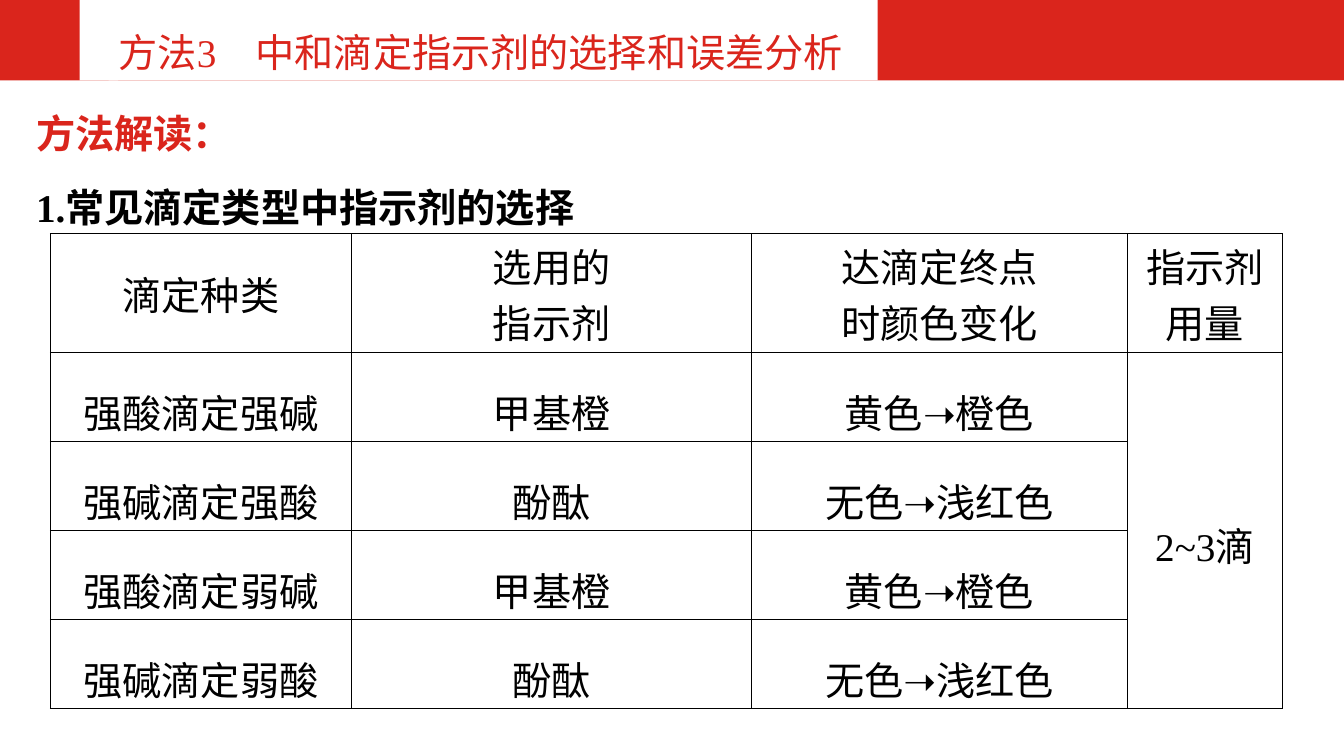
from lxml.etree import SubElement
from pptx import Presentation
from pptx.dml.color import RGBColor
from pptx.enum.shapes import MSO_SHAPE
from pptx.enum.text import MSO_ANCHOR, MSO_AUTO_SIZE, PP_ALIGN
from pptx.oxml import parse_xml
from pptx.oxml.ns import nsdecls, qn
from pptx.util import Cm, Pt

RED = RGBColor(0xDA, 0x25, 0x1C)
WHITE = RGBColor(0xFF, 0xFF, 0xFF)
BLACK = RGBColor(0, 0, 0)
SERIF = "Times New Roman"
SANS = "Noto Sans CJK SC"

SLIDE_WIDTH, SLIDE_HEIGHT = Cm(33.87), Cm(19.05)
BANNER_HEIGHT = Cm(2.03)
COLUMN_WIDTHS = [Cm(7.59), Cm(10.08), Cm(9.47), Cm(3.91)]
ROW_HEIGHTS = [Cm(3)] + [Cm(2.24)] * 4
HEADER = ["滴定种类", "选用的\n指示剂", "达滴定终点\n时颜色变化", "指示剂用量"]
METHYL_ORANGE = ["甲基橙", "黄色➝橙色"]
PHENOLPHTHALEIN = ["酚酞", "无色➝浅红色"]
TITRATIONS = [
    ["强酸滴定强碱", *METHYL_ORANGE, "2~3滴"],
    ["强碱滴定强酸", *PHENOLPHTHALEIN, ""],
    ["强酸滴定弱碱", *METHYL_ORANGE, ""],
    ["强碱滴定弱酸", *PHENOLPHTHALEIN, ""],
]


def write_text(text_frame, text, color, latin=SERIF, bold=False,
               align=PP_ALIGN.LEFT, spacing=1.5):
    text_frame.text = text
    for paragraph in text_frame.paragraphs:
        paragraph.alignment = align
        paragraph.line_spacing = spacing
        for run in paragraph.runs:
            font = run.font
            font.size, font.bold, font.name = Pt(28), bold, latin
            font.color.rgb = color
            east_asian = SubElement(run._r.get_or_add_rPr(), qn("a:ea"))
            east_asian.set("typeface", SANS)


def add_block(slide, left, width, color):
    shape = slide.shapes.add_shape(
        MSO_SHAPE.RECTANGLE, left, 0, width, BANNER_HEIGHT)
    shape.shadow.inherit = False
    shape.fill.solid()
    shape.fill.fore_color.rgb = color
    shape.line.fill.background()
    return shape


def add_heading(slide, top, text, color, latin):
    box = slide.shapes.add_textbox(Cm(0.66), top, Cm(32.56), Cm(1.83))
    box.text_frame.word_wrap = True
    box.text_frame.auto_size = MSO_AUTO_SIZE.SHAPE_TO_FIT_TEXT
    write_text(box.text_frame, text, color, latin, bold=True)


def add_borders(cell):
    properties = cell._tc.get_or_add_tcPr()
    for index, side in enumerate(("lnL", "lnR", "lnT", "lnB")):
        properties.insert(index, parse_xml(
            f'<a:{side} {nsdecls("a")} w="{Pt(1)}"><a:solidFill>'
            f'<a:srgbClr val="{BLACK}"/></a:solidFill></a:{side}>'))


def add_indicator_table(slide):
    rows = [HEADER] + TITRATIONS
    table = slide.shapes.add_table(
        len(rows), len(HEADER), Cm(1.27), Cm(5.89),
        sum(COLUMN_WIDTHS), sum(ROW_HEIGHTS)).table
    for column, width in zip(table.columns, COLUMN_WIDTHS):
        column.width = width
    for row, height in zip(table.rows, ROW_HEIGHTS):
        row.height = height
    for row_index, texts in enumerate(rows):
        for column_index, text in enumerate(texts):
            cell = table.cell(row_index, column_index)
            cell.margin_left = cell.margin_right = 0
            cell.margin_top = cell.margin_bottom = 0
            cell.vertical_anchor = MSO_ANCHOR.MIDDLE
            cell.fill.solid()
            cell.fill.fore_color.rgb = WHITE
            add_borders(cell)
            write_text(cell.text_frame, text, BLACK, align=PP_ALIGN.CENTER,
                       spacing=1.5 if row_index else 1.0)
    # One dosage applies to every titration
    table.cell(1, 3).merge(table.cell(4, 3))


def main():
    presentation = Presentation()
    presentation.slide_width = SLIDE_WIDTH
    presentation.slide_height = SLIDE_HEIGHT
    slide = presentation.slides.add_slide(presentation.slide_layouts[6])

    # Banner with the title
    add_block(slide, 0, SLIDE_WIDTH, RED)
    add_block(slide, Cm(2.01), Cm(0.97), WHITE)
    title = add_block(slide, Cm(2.74), Cm(19.38), WHITE)
    title.text_frame.vertical_anchor = MSO_ANCHOR.MIDDLE
    write_text(title.text_frame, "方法3　中和滴定指示剂的选择和误差分析", RED)

    # Headings
    add_heading(slide, Cm(2.03), "方法解读：", RED, SANS)
    add_heading(slide, Cm(3.91), "1.常见滴定类型中指示剂的选择", BLACK, SERIF)

    # Choice of indicator
    add_indicator_table(slide)
    presentation.save("out.pptx")


if __name__ == "__main__":
    main()
